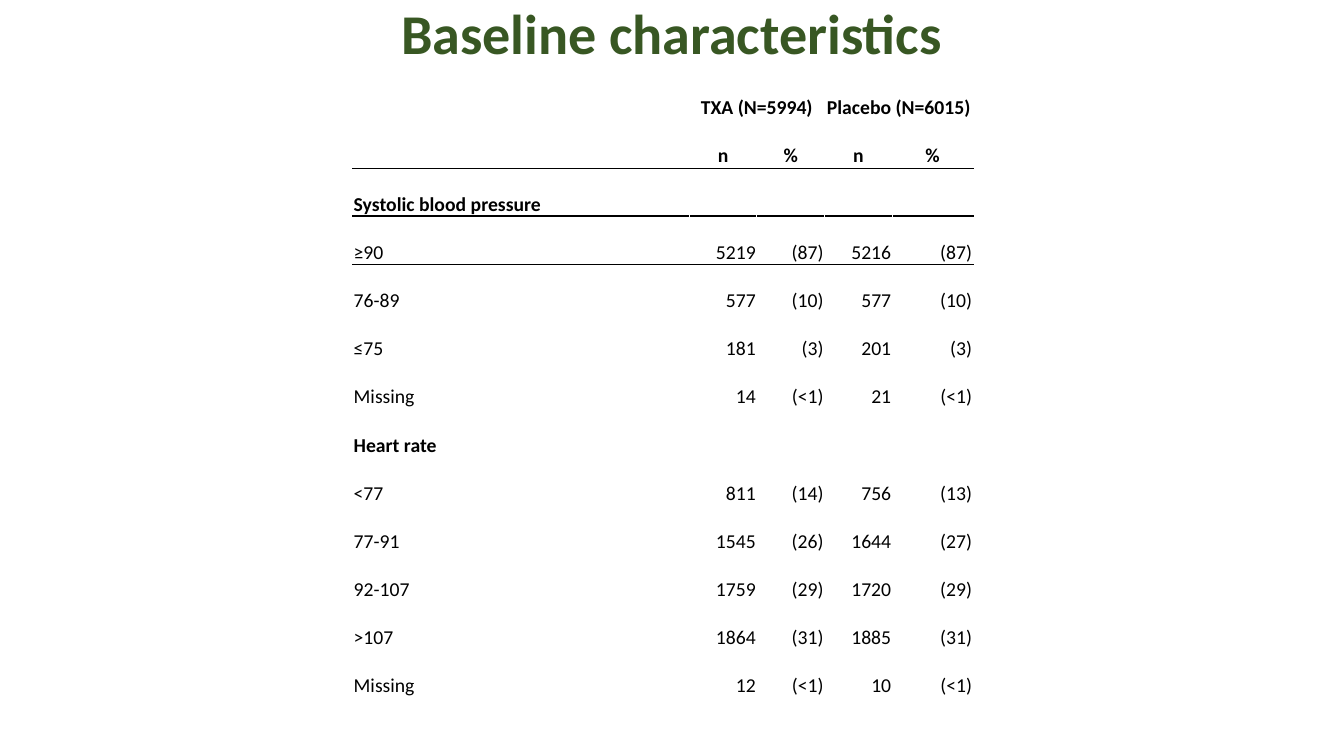
import pptx
import pptx.dml.color
import pptx.enum.text
import pptx.oxml
import pptx.oxml.ns
import pptx.util

Inches = pptx.util.Inches
ALIGN = pptx.enum.text.PP_ALIGN
ANCHOR = pptx.enum.text.MSO_ANCHOR

COLUMN_WIDTHS = [3.33, 0.67, 0.67, 0.67, 0.8]
ROW_HEIGHT = 6.2 / 13
TABLE_ROWS = [
    ["", "TXA (N=5994)", "", "Placebo (N=6015)", ""],
    ["", "n", "%", "n", "%"],
    ["Systolic blood pressure", "", "", "", ""],
    ["≥90", "5219", "(87)", "5216", "(87)"],
    ["76-89", "577", "(10)", "577", "(10)"],
    ["≤75", "181", "(3)", "201", "(3)"],
    ["Missing", "14", "(<1)", "21", "(<1)"],
    ["Heart rate", "", "", "", ""],
    ["<77", "811", "(14)", "756", "(13)"],
    ["77-91", "1545", "(26)", "1644", "(27)"],
    ["92-107", "1759", "(29)", "1720", "(29)"],
    [">107", "1864", "(31)", "1885", "(31)"],
    ["Missing", "12", "(<1)", "10", "(<1)"],
]
HEADER_ROWS = (0, 1)
SECTION_ROWS = (2, 7)
RULED_ROWS = {1: 1, 2: 1.5}  # row above the rule: line width in points


def set_all(target, values):
    for name, value in values.items():
        setattr(target, name, value)


def colour(hex_text):
    return pptx.dml.color.RGBColor.from_string(hex_text)


class SlideBuilder:
    font = "Calibri"
    title_colour = "385723"
    text_colour = "000000"

    def __init__(self, page):
        self.page = page

    def add_text(self, para, text, size, hex_text, bold, align):
        para.alignment = align
        span = para.add_run()
        span.text = text
        set_all(span.font, {"name": self.font, "size": pptx.util.Pt(size), "bold": bold})
        span.font.color.rgb = colour(hex_text)

    def title(self, text, left, top, width, height):
        box = self.page.shapes.title
        set_all(box, {"left": Inches(left), "top": Inches(top),
                      "width": Inches(width), "height": Inches(height)})
        set_all(box.text_frame, {"vertical_anchor": ANCHOR.MIDDLE, "word_wrap": True})
        para = box.text_frame.paragraphs[0]
        set_all(para, {"line_spacing": 0.9, "space_before": pptx.util.Pt(0)})
        self.add_text(para, text, 40, self.title_colour, True, ALIGN.CENTER)

    def border(self, cell, side, points):
        line = pptx.oxml.parse_xml(
            f'<a:{side} {pptx.oxml.ns.nsdecls("a")} w="{pptx.util.Pt(points)}">'
            f'<a:solidFill><a:srgbClr val="{self.text_colour}"/></a:solidFill></a:{side}>')
        cell._tc.get_or_add_tcPr().insert(0, line)

    def cell(self, cell, text, bold, align):
        cell.fill.background()
        set_all(cell, {"vertical_anchor": ANCHOR.BOTTOM, "margin_left": Inches(0.01),
                       "margin_right": Inches(0.01), "margin_top": Inches(0.01),
                       "margin_bottom": 0})
        if text:
            self.add_text(cell.text_frame.paragraphs[0], text, 14, self.text_colour, bold, align)

    def table(self, rows, left, top):
        frame = self.page.shapes.add_table(
            len(rows), len(COLUMN_WIDTHS), Inches(left), Inches(top),
            Inches(sum(COLUMN_WIDTHS)), Inches(ROW_HEIGHT * len(rows)))
        table = frame.table
        set_all(table, {"first_row": False, "horz_banding": False})
        for column, width in zip(table.columns, COLUMN_WIDTHS):
            column.width = Inches(width)

        # Text of every cell
        for r, row in enumerate(rows):
            table.rows[r].height = Inches(ROW_HEIGHT)
            for c, text in enumerate(row):
                if r in HEADER_ROWS:
                    align = ALIGN.CENTER
                else:
                    align = ALIGN.RIGHT if c else ALIGN.LEFT
                self.cell(table.cell(r, c), text, r in HEADER_ROWS + SECTION_ROWS, align)

        # Rules below the column heads and the first section
        for r, points in RULED_ROWS.items():
            for c in range(len(COLUMN_WIDTHS)):
                # Each rule goes in front, so a cell's top precedes its bottom
                self.border(table.cell(r, c), "lnB", points)
        for r, points in RULED_ROWS.items():
            for c in range(len(COLUMN_WIDTHS)):
                self.border(table.cell(r + 1, c), "lnT", points)

        # Merged group heads and section rows
        for c in (1, 3):
            table.cell(0, c).merge(table.cell(0, c + 1))
        for r in SECTION_ROWS:
            table.cell(r, 0).merge(table.cell(r, len(COLUMN_WIDTHS) - 1))


def main():
    deck = pptx.Presentation()
    set_all(deck, {"slide_width": Inches(13.3), "slide_height": Inches(7.48)})
    builder = SlideBuilder(deck.slides.add_slide(deck.slide_layouts[5]))
    builder.table(TABLE_ROWS, 3.49, 0.71)
    builder.title("Baseline characteristics", 0.91, 0, 11.47, 0.71)
    deck.save("out.pptx")


if __name__ == "__main__":
    main()
